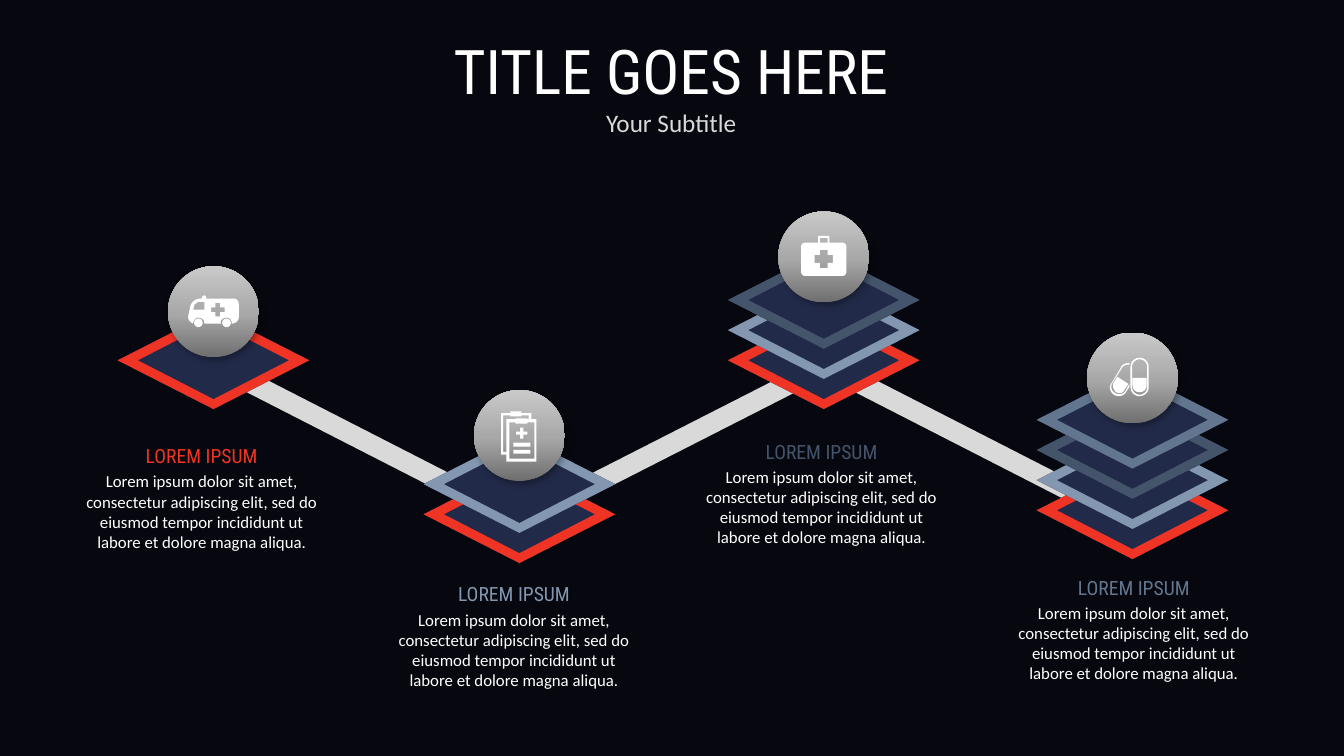
from dataclasses import dataclass

from pptx import Presentation
from pptx import util as u
from pptx.dml.color import RGBColor
from pptx.enum import shapes, text
from pptx.oxml import parse_xml
from pptx.oxml.ns import nsdecls


@dataclass(frozen=True)
class Theme:
    back: str = "07080F"
    plate: str = "222A49"
    tiers: tuple = ("EF3425", "8397B1", "44546B", "62768F")
    road: str = "D9D9D9"
    white: str = "FFFFFF"
    disc: tuple = ((0, "6F6F6F"), (48, "A8A8A8"), (100, "C9C9C9"))
    head_font: str = "Roboto Condensed"
    body_font: str = "Calibri"
    title: int = 44
    subtitle: int = 18
    heading: int = 14
    body: int = 12


T = Theme()
PLATE_W, PLATE_H, TIER_STEP = 4.83, 2.46, 0.76
BAND_X, BAND_Y = 0.51, 0.25
DISC = 2.29
CAPTION_W, CAPTION_H = 6.35, 3.61
BODY = ("Lorem ipsum dolor sit amet, consectetur adipiscing elit, sed do "
        "eiusmod tempor incididunt ut labore et dolore magna aliqua.")


# Drawing helpers: all lengths in centimetres
def paint(sp, colour):
    sp.fill.solid()
    sp.fill.fore_color.rgb = RGBColor.from_string(colour)
    sp.line.fill.background()
    sp.shadow.inherit = False
    return sp


def preset(parent, kind, x, y, w, h, colour):
    sp = parent.shapes.add_shape(kind, u.Cm(x), u.Cm(y), u.Cm(w), u.Cm(h))
    return paint(sp, colour)


def trace(contour):
    """Turn points and cubic curves (six numbers) into a list of points."""
    pts = []
    for seg in contour:
        if len(seg) == 2:
            pts.append(seg)
            continue
        nodes = (pts[-1], seg[:2], seg[2:4], seg[4:])
        for t in (i / 8 for i in range(1, 9)):
            weights = ((1 - t) ** 3, 3 * t * (1 - t) ** 2, 3 * t * t * (1 - t), t ** 3)
            pts.append(tuple(sum(k * n[axis] for k, n in zip(weights, nodes))
                             for axis in (0, 1)))
    return pts


def outline(parent, cx, cy, contours, colour):
    """Fill contours given around a centre; inner ones become holes."""
    fb = None
    for contour in contours:
        pts = [(u.Cm(cx + x), u.Cm(cy + y)) for x, y in trace(contour)]
        if fb is None:
            fb = parent.shapes.build_freeform(*pts[0])
        else:
            fb.move_to(*pts[0])
        fb.add_line_segments(pts[1:], close=True)
    return paint(fb.convert_to_shape(), colour)


def rounded(x, y, w, h, r):
    k, x2, y2 = r * 0.45, x + w, y + h
    return [(x + r, y), (x2 - r, y), (x2 - k, y, x2, y + k, x2, y + r),
            (x2, y2 - r), (x2, y2 - k, x2 - k, y2, x2 - r, y2),
            (x + r, y2), (x + k, y2, x, y2 - k, x, y2 - r),
            (x, y + r), (x, y + k, x + k, y, x + r, y)]


def box(x, y, w, h):
    return [(x, y), (x + w, y), (x + w, y + h), (x, y + h)]


def rhombus(rx, ry):
    return [(0, -ry), (rx, 0), (0, ry), (-rx, 0)]


def plus(cx, cy, arm, half):
    pts = [(-half, -arm), (half, -arm), (half, -half), (arm, -half), (arm, half), (half, half),
           (half, arm), (-half, arm), (-half, half), (-arm, half), (-arm, -half), (-half, -half)]
    return [(cx + x, cy + y) for x, y in pts]


def write(p, words, font, size, colour, before=0):
    p.alignment = text.PP_ALIGN.CENTER
    p.space_before = u.Pt(before)
    r = p.add_run()
    r.text = words
    r.font.name, r.font.size = font, u.Pt(size)
    r.font.color.rgb = RGBColor.from_string(colour)


# Icons, each placed around the centre of its disc
def ambulance(g, cx, cy):
    body = [(.51, -.33), (-.18, -.33), (-.18, -.38, -.2, -.41, -.23, -.41),
            (-.25, -.41, -.3, -.38, -.3, -.33), (-.33, -.33), (-.43, -.33, -.53, -.28, -.58, -.15),
            (-.64, .13), (-.64, .2, -.58, .28, -.51, .3), (-.51, .28),
            (-.51, .2, -.43, .15, -.38, .15), (-.3, .15, -.23, .2, -.23, .28), (-.23, .3),
            (.2, .3), (.18, .28), (.18, .2, .25, .15, .33, .15), (.41, .15, .46, .2, .46, .28),
            (.46, .3), (.56, .3, .64, .23, .64, .13), (.64, -.15), (.64, -.25, .61, -.33, .51, -.33)]
    window = [(-.23, -.05), (-.51, -.05), (-.48, -.18), (-.38, -.25), (-.23, -.25)]
    outline(g, cx, cy, [body, window, plus(.11, -.05, .17, .06)], T.white)
    for x in (-.38, .33):
        preset(g, shapes.MSO_SHAPE.OVAL, cx + x - .11, cy + .17, .22, .22, T.white)


def clipboard(g, cx, cy):
    boards = [(.3, -.41), (.3, -.56), (.05, -.56), (.05, -.61), (-.23, -.61), (-.23, -.56),
              (-.46, -.56), (-.46, .48), (-.33, .48), (-.33, .66), (.43, .66), (.43, -.41)]
    back = [(-.33, .41), (-.41, .41), (-.41, -.51), (-.23, -.51), (-.23, -.48), (.05, -.48),
            (.05, -.51), (.23, -.51), (.23, -.41), (.2, -.41), (.2, -.43), (-.1, -.43),
            (-.1, -.41), (-.33, -.41)]
    front = [(-.25, .58), (-.25, -.33), (-.1, -.33), (-.1, -.3), (.2, -.3), (.2, -.33),
             (.38, -.33), (.38, .58)]
    outline(g, cx, cy, [boards, back, front], T.white)
    for y in (.18, .36):
        preset(g, shapes.MSO_SHAPE.RECTANGLE, cx - .15, cy + y, .43, .1, T.white)
    outline(g, cx, cy, [plus(.06, -.06, .14, .04)], T.white)


def first_aid(g, cx, cy):
    outline(g, cx, cy, [rounded(-.57, -.36, 1.14, .84, .1), box(-.14, -.53, .28, .17),
                        box(-.1, -.48, .2, .12), plus(0, .05, .23, .1)], T.white)


def pills(g, cx, cy):
    upright = [rounded(-.05, -.51, .46, .97, .23), rounded(-.01, -.47, .38, .89, .19)]
    upright_half = [(0, 0), (.36, 0), (.36, .18), (.36, .42, 0, .42, 0, .18)]
    tilted_half = [(-.1, .15), (-.2, .3), (-.23, .38, -.33, .41, -.41, .36),
                   (-.48, .3, -.51, .2, -.48, .13), (-.38, -.03)]
    tilted = [(-.53, .13), (-.3, -.25), (-.28, -.33, -.18, -.38, -.08, -.38), (-.08, -.33),
              (-.15, -.36, -.25, -.3, -.28, -.23), (-.51, .13), (-.56, .23, -.53, .33, -.43, .38),
              (-.36, .43, -.23, .41, -.18, .33), (-.08, .15), (-.08, .23), (-.15, .33),
              (-.2, .46, -.36, .48, -.46, .43), (-.56, .36, -.61, .23, -.53, .13)]
    for contours in (upright, [upright_half], [tilted_half], [tilted]):
        outline(g, cx, cy, contours, T.white)


# Slide regions
def title_block(s, x, y, w, h):
    sp = s.shapes.title
    sp.left, sp.top, sp.width, sp.height = (u.Cm(v) for v in (x, y, w, h))
    tf = sp.text_frame
    tf.auto_size, tf.vertical_anchor = text.MSO_AUTO_SIZE.NONE, text.MSO_ANCHOR.TOP
    write(tf.paragraphs[0], "TITLE GOES HERE", T.head_font, T.title, T.white)
    write(tf.add_paragraph(), "Your Subtitle", T.body_font, T.subtitle, T.road)


def road(s, cx, cy, length, angle):
    width = 0.51
    sp = preset(s, shapes.MSO_SHAPE.RECTANGLE, cx - width / 2, cy - length / 2, width, length, T.road)
    sp.rotation = angle


def disc(s, x, y):
    sp = preset(s, shapes.MSO_SHAPE.OVAL, x, y, DISC, DISC, T.road)
    stops = "".join(f'<a:gs pos="{pos * 1000}"><a:srgbClr val="{c}"/></a:gs>' for pos, c in T.disc)
    spPr = sp._element.spPr
    spPr.replace(spPr.find("{*}solidFill"), parse_xml(
        f'<a:gradFill {nsdecls("a")} rotWithShape="1"><a:gsLst>{stops}</a:gsLst>'
        '<a:lin ang="16200000" scaled="0"/></a:gradFill>'))
    spPr.replace(spPr.find("{*}effectLst"), parse_xml(
        f'<a:effectLst {nsdecls("a")}><a:outerShdw blurRad="57150" dist="33020" dir="3180000" '
        'algn="tl" rotWithShape="0"><a:srgbClr val="000000"><a:alpha val="30000"/></a:srgbClr>'
        '</a:outerShdw></a:effectLst>'))


def stack(s, cx, base_y, tiers, disc_y, icon):
    for i, colour in enumerate(T.tiers[:tiers]):
        y = base_y - i * TIER_STEP
        g = s.shapes.add_group_shape()
        preset(g, shapes.MSO_SHAPE.DIAMOND, cx - PLATE_W / 2, y, PLATE_W, PLATE_H, T.plate)
        frame = [rhombus(PLATE_W / 2 - BAND_X, PLATE_H / 2 - BAND_Y), rhombus(PLATE_W / 2, PLATE_H / 2)]
        outline(g, cx, y + PLATE_H / 2, frame, colour)
    disc(s, cx - DISC / 2, disc_y)
    icon(s.shapes.add_group_shape(), cx, disc_y + DISC / 2)


def caption(s, x, y, colour):
    tf = s.shapes.add_textbox(u.Cm(x), u.Cm(y), u.Cm(CAPTION_W), u.Cm(CAPTION_H)).text_frame
    tf.word_wrap = True
    write(tf.paragraphs[0], "LOREM IPSUM", T.head_font, T.heading, colour)
    write(tf.add_paragraph(), BODY, T.body_font, T.body, T.white, before=2.4)


def main():
    prs = Presentation()
    prs.slide_width, prs.slide_height = u.Cm(33.87), u.Cm(19.05)
    s = prs.slides.add_slide(prs.slide_layouts[5])
    s.background.fill.solid()
    s.background.fill.fore_color.rgb = RGBColor.from_string(T.back)

    title_block(s, 9.27, 0.71, 15.29, 4.78)
    for spot in ((9.45, 11.25, 7.11, 297.1), (24.49, 11.1, 6.35, 297.1), (17.15, 11.07, 6.35, 243)):
        road(s, *spot)

    # Stack centre, base top, disc top, icon, caption corner
    stations = ((5.38, 7.85, 6.71, ambulance, (1.91, 11.07)),
                (13.09, 11.73, 9.83, clipboard, (9.78, 14.55)),
                (20.76, 7.85, 5.33, first_aid, (17.53, 10.95)),
                (28.54, 11.63, 8.38, pills, (25.4, 14.38)))
    for tiers, (cx, base_y, disc_y, icon, corner) in enumerate(stations, 1):
        stack(s, cx, base_y, tiers, disc_y, icon)
        caption(s, *corner, T.tiers[tiers - 1])
    prs.save("out.pptx")


if __name__ == "__main__":
    main()
